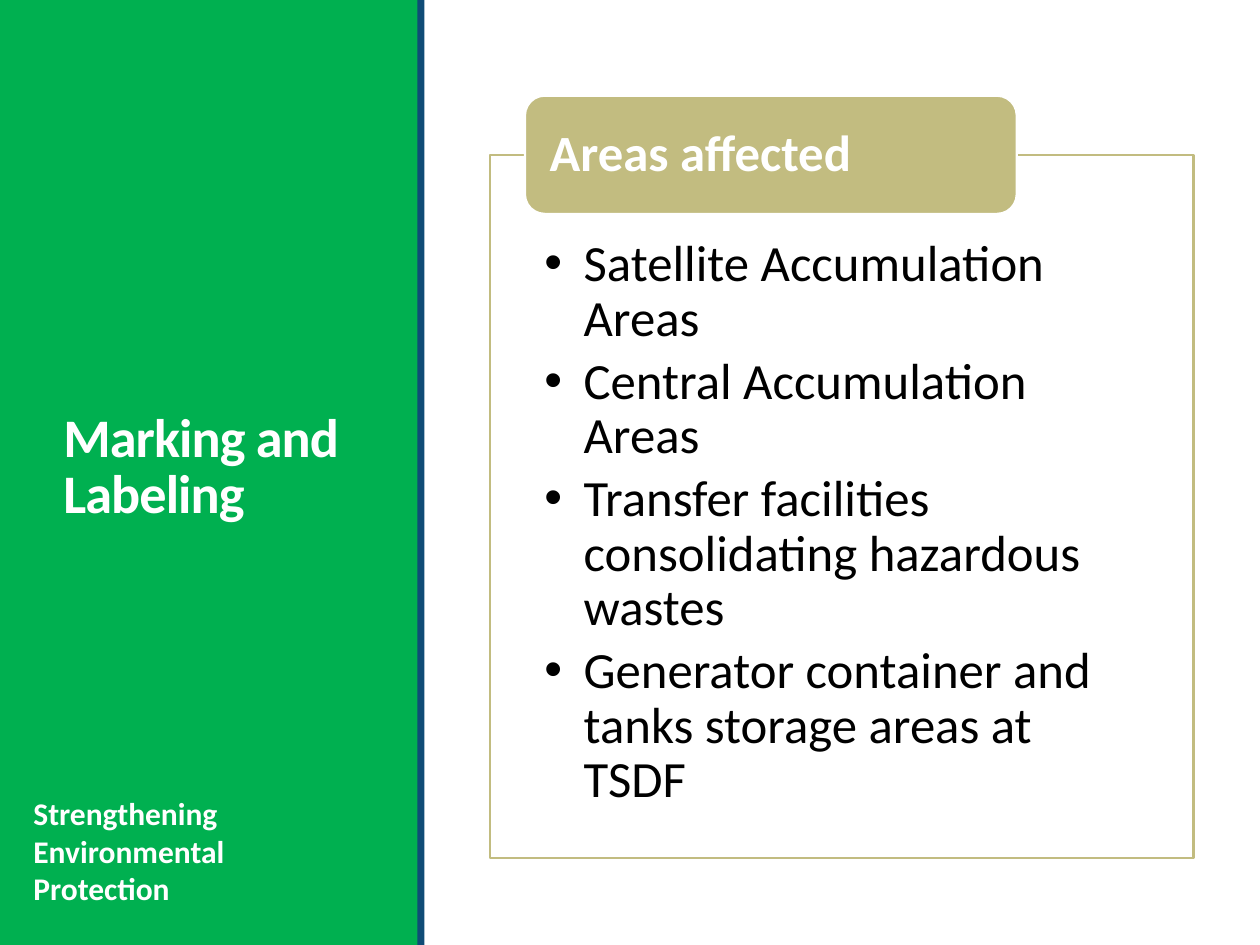
from pptx import Presentation
from pptx.dml.color import RGBColor
from pptx.enum.shapes import MSO_SHAPE
from pptx.enum.text import MSO_ANCHOR, MSO_AUTO_SIZE, PP_ALIGN
from pptx.oxml.xmlchemy import OxmlElement
from pptx.util import Pt

RECTANGLE = MSO_SHAPE.RECTANGLE
ROUNDED = MSO_SHAPE.ROUNDED_RECTANGLE
TOP, MIDDLE = MSO_ANCHOR.TOP, MSO_ANCHOR.MIDDLE
LEFT = PP_ALIGN.LEFT
NO_AUTOFIT = MSO_AUTO_SIZE.NONE

TITLE = "Marking and Labeling"
HEADING = "Areas affected"
AREAS = [
    "Satellite Accumulation Areas",
    "Central Accumulation Areas",
    "Transfer facilities consolidating hazardous wastes",
    "Generator container and tanks storage areas at TSDF",
]
MOTTO = "Strengthening Environmental Protection"

COLORS = {
    "green": "00B050",
    "navy": "0F4C76",
    "khaki": "C2BC80",
    "white": "FFFFFF",
    "black": "000000",
}
FONT = "Calibri"
WIDTH, HEIGHT = 720, 540
PANEL_WIDTH = 239
STRIPE_WIDTH = 4
LINE_WIDTH = 1.25
BULLET_INDENT = 22.5


def color(name):
    return RGBColor.from_string(COLORS[name])


def place(shape, left, top, width, height):
    shape.left, shape.top = Pt(left), Pt(top)
    shape.width, shape.height = Pt(width), Pt(height)


def paint(shape, fill, line=None):
    shape.fill.solid()
    shape.fill.fore_color.rgb = color(fill)
    if line:
        shape.line.color.rgb = color(line)
        shape.line.width = Pt(LINE_WIDTH)
    else:
        shape.line.fill.background()


def add_box(slide, kind, box, fill, line=None):
    shape = slide.shapes.add_shape(kind, *map(Pt, box))
    shape.shadow.inherit = False
    paint(shape, fill, line)
    return shape


def write(shape, lines, size, ink, bold=False, spacing=1.0, after=0,
          anchor=TOP, insets=(7.2, 3.6, 7.2, 3.6)):
    frame = shape.text_frame
    frame.text = "\n".join(lines)
    frame.word_wrap = True
    frame.auto_size = NO_AUTOFIT
    frame.vertical_anchor = anchor
    (frame.margin_left, frame.margin_top,
     frame.margin_right, frame.margin_bottom) = map(Pt, insets)
    for paragraph in frame.paragraphs:
        paragraph.alignment = LEFT
        paragraph.line_spacing = spacing
        paragraph.space_before = Pt(0)
        paragraph.space_after = Pt(after)
        for run in paragraph.runs:
            run.font.name = FONT
            run.font.size = Pt(size)
            run.font.bold = bold
            run.font.color.rgb = color(ink)


def add_bullet(paragraph):
    properties = paragraph._p.get_or_add_pPr()
    properties.set("marL", str(Pt(BULLET_INDENT)))
    properties.set("indent", str(-Pt(BULLET_INDENT)))
    bullet = OxmlElement("a:buChar")
    bullet.set("char", "•")
    properties.append(bullet)


def bring_to_front(shape):
    shape.element.getparent().append(shape.element)


def main():
    presentation = Presentation()
    presentation.slide_width, presentation.slide_height = Pt(WIDTH), Pt(HEIGHT)
    slide = presentation.slides.add_slide(presentation.slide_layouts[1])
    title, areas = slide.shapes.title, slide.placeholders[1]

    add_box(slide, RECTANGLE, (0, 0, PANEL_WIDTH, HEIGHT), "green")
    add_box(slide, RECTANGLE, (PANEL_WIDTH - 0.5, 0, STRIPE_WIDTH, HEIGHT), "navy")

    place(title, 29, 41, 182, 454)
    write(title, [TITLE], 31, "white", bold=True, spacing=0.85, anchor=MIDDLE)
    for run in title.text_frame.paragraphs[0].runs:
        run.font._element.set("spc", "-50")
    bring_to_front(title)

    place(areas, 280, 88.5, 402, 402)
    paint(areas, "white", "khaki")
    write(areas, AREAS, 29, "black", spacing=0.9, after=4.35,
          insets=(31, 47.5, 31, 16.5))
    for paragraph in areas.text_frame.paragraphs:
        add_bullet(paragraph)
    bring_to_front(areas)

    heading = add_box(slide, ROUNDED, (300, 54.7, 281, 67.5), "khaki", "white")
    write(heading, [HEADING], 29, "white", bold=True, spacing=0.9,
          anchor=MIDDLE, insets=(10.8, 0, 10.8, 0))

    motto = slide.shapes.add_textbox(Pt(12), Pt(450), Pt(168), Pt(73))
    write(motto, [MOTTO], 18, "white", bold=True)

    presentation.save("out.pptx")


if __name__ == "__main__":
    main()
